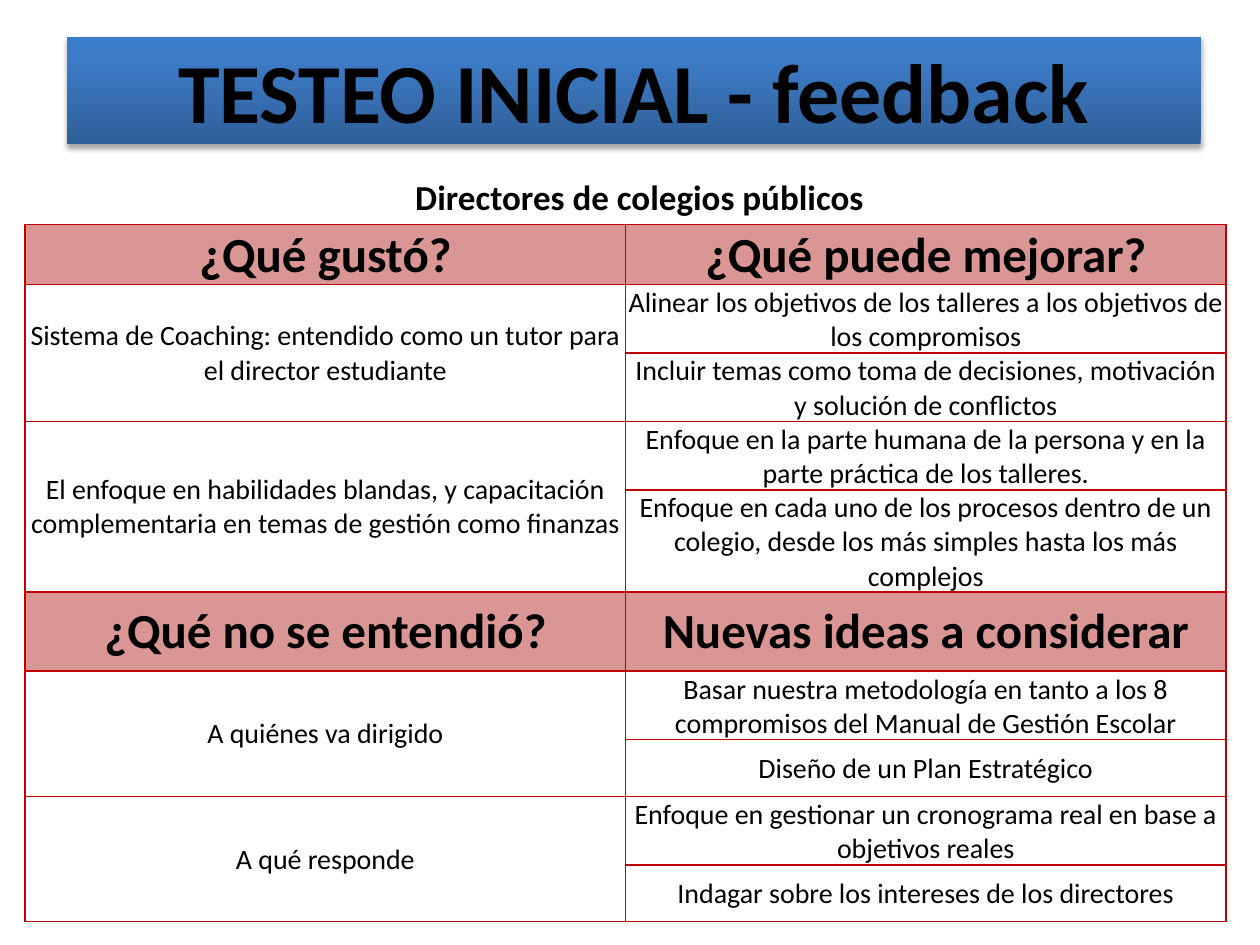
from lxml import etree
from pptx import Presentation, util as u
from pptx.dml.color import RGBColor
from pptx.enum import text
from pptx.oxml import parse_xml
from pptx.oxml.ns import nsdecls, qn

BLACK = RGBColor(0, 0, 0)
ROSE = RGBColor(0xDA, 0x96, 0x94)
RED = RGBColor(0xC0, 0, 0)
FONT = "Calibri"

# Content: each section has two headings, then a left topic with its right-hand notes
TITLE = "TESTEO INICIAL - feedback"
AUDIENCE = "Directores de colegios públicos"
SECTIONS = [
    (("¿Qué gustó?", "¿Qué puede mejorar?"), 0.45, [
        ("Sistema de Coaching: entendido como un tutor para el director estudiante",
         ["Alinear los objetivos de los talleres a los objetivos de los compromisos",
          "Incluir temas como toma de decisiones, motivación y solución de conflictos"]),
        ("El enfoque en habilidades blandas, y capacitación complementaria en temas "
         "de gestión como finanzas",
         ["Enfoque en la parte humana de la persona y en la parte práctica de los talleres.",
          "Enfoque en cada uno de los procesos dentro de un colegio, desde los más "
          "simples hasta los más complejos"]),
    ]),
    (("¿Qué no se entendió?", "Nuevas ideas a considerar"), 0.63, [
        ("A quiénes va dirigido",
         ["Basar nuestra metodología en tanto a los 8 compromisos del Manual de Gestión Escolar",
          "Diseño de un Plan Estratégico"]),
        ("A qué responde",
         ["Enfoque en gestionar un cronograma real en base a objetivos reales",
          "Indagar sobre los intereses de los directores"]),
    ]),
]
ROW_HEIGHT = 0.45
TABLE_LEFT, TABLE_TOP, TABLE_WIDTH = 0.2, 1.78, 9.53

TITLE_GRADIENT = f"""<a:gradFill {nsdecls('a')} rotWithShape="1"><a:gsLst>
<a:gs pos="0"><a:srgbClr val="2F5F99"/></a:gs>
<a:gs pos="80000"><a:srgbClr val="3D7CC7"/></a:gs>
<a:gs pos="100000"><a:srgbClr val="3A7CCB"/></a:gs>
</a:gsLst><a:lin ang="16200000" scaled="0"/></a:gradFill>"""
TITLE_SHADOW = f"""<a:effectLst {nsdecls('a')}>
<a:outerShdw blurRad="{u.Pt(3.1)}" dist="{u.Pt(1.8)}" dir="5400000" rotWithShape="0">
<a:srgbClr val="000000"><a:alpha val="35000"/></a:srgbClr></a:outerShdw></a:effectLst>"""
RECTANGLE = f'<a:prstGeom {nsdecls("a")} prst="rect"><a:avLst/></a:prstGeom>'


def write(frame, words, size, bold):
    frame.text = words
    para = frame.paragraphs[0]
    para.alignment = text.PP_ALIGN.CENTER
    font = para.runs[0].font
    font.name, font.size, font.bold = FONT, u.Pt(size), bold
    font.color.rgb = BLACK


def draw_borders(cell):
    properties = cell._tc.get_or_add_tcPr()
    for side in ("a:lnL", "a:lnR", "a:lnT", "a:lnB"):
        line = etree.SubElement(properties, qn(side), w=str(u.Pt(1)))
        fill = etree.SubElement(line, qn("a:solidFill"))
        etree.SubElement(fill, qn("a:srgbClr"), val=str(RED))


def fill_cell(cell, words, heading=False):
    write(cell.text_frame, words, 28 if heading else 16, heading)
    cell.vertical_anchor = text.MSO_ANCHOR.MIDDLE
    cell.margin_left = cell.margin_right = cell.margin_top = u.Inches(0.01)
    cell.margin_bottom = 0
    if heading:
        cell.fill.solid()
        cell.fill.fore_color.rgb = ROSE


deck = Presentation()
deck.slide_width, deck.slide_height = u.Inches(10), u.Inches(7.5)
page = deck.slides.add_slide(deck.slide_layouts[5])

# Title banner
title = page.shapes.title
title.left, title.top = u.Inches(0.53), u.Inches(0.29)
title.width, title.height = u.Inches(9), u.Inches(0.85)
for part in (RECTANGLE, TITLE_GRADIENT, TITLE_SHADOW):
    title._element.spPr.append(parse_xml(part))
write(title.text_frame, TITLE, 48, True)
title.text_frame.vertical_anchor = text.MSO_ANCHOR.MIDDLE

# Audience line
box = page.shapes.add_textbox(u.Inches(2.79), u.Inches(1.34), u.Inches(4.57), u.Inches(0.44))
box.text_frame.word_wrap = True
write(box.text_frame, AUDIENCE, 20, True)

# Feedback table
row_count = sum(1 + sum(len(notes) for _, notes in topics) for _, _, topics in SECTIONS)
table = page.shapes.add_table(
    row_count, 2, u.Inches(TABLE_LEFT), u.Inches(TABLE_TOP),
    u.Inches(TABLE_WIDTH), u.Inches(ROW_HEIGHT * row_count)).table
table.first_row = table.horz_banding = False
for row in table.rows:
    row.height = u.Inches(ROW_HEIGHT)
for cell in table.iter_cells():
    draw_borders(cell)
    cell.fill.background()

row = 0
for headings, height, topics in SECTIONS:
    table.rows[row].height = u.Inches(height)
    for column, heading in enumerate(headings):
        fill_cell(table.cell(row, column), heading, heading=True)
    row += 1
    for topic, notes in topics:
        table.cell(row, 0).merge(table.cell(row + len(notes) - 1, 0))
        fill_cell(table.cell(row, 0), topic)
        for note in notes:
            fill_cell(table.cell(row, 1), note)
            row += 1

deck.save("out.pptx")
